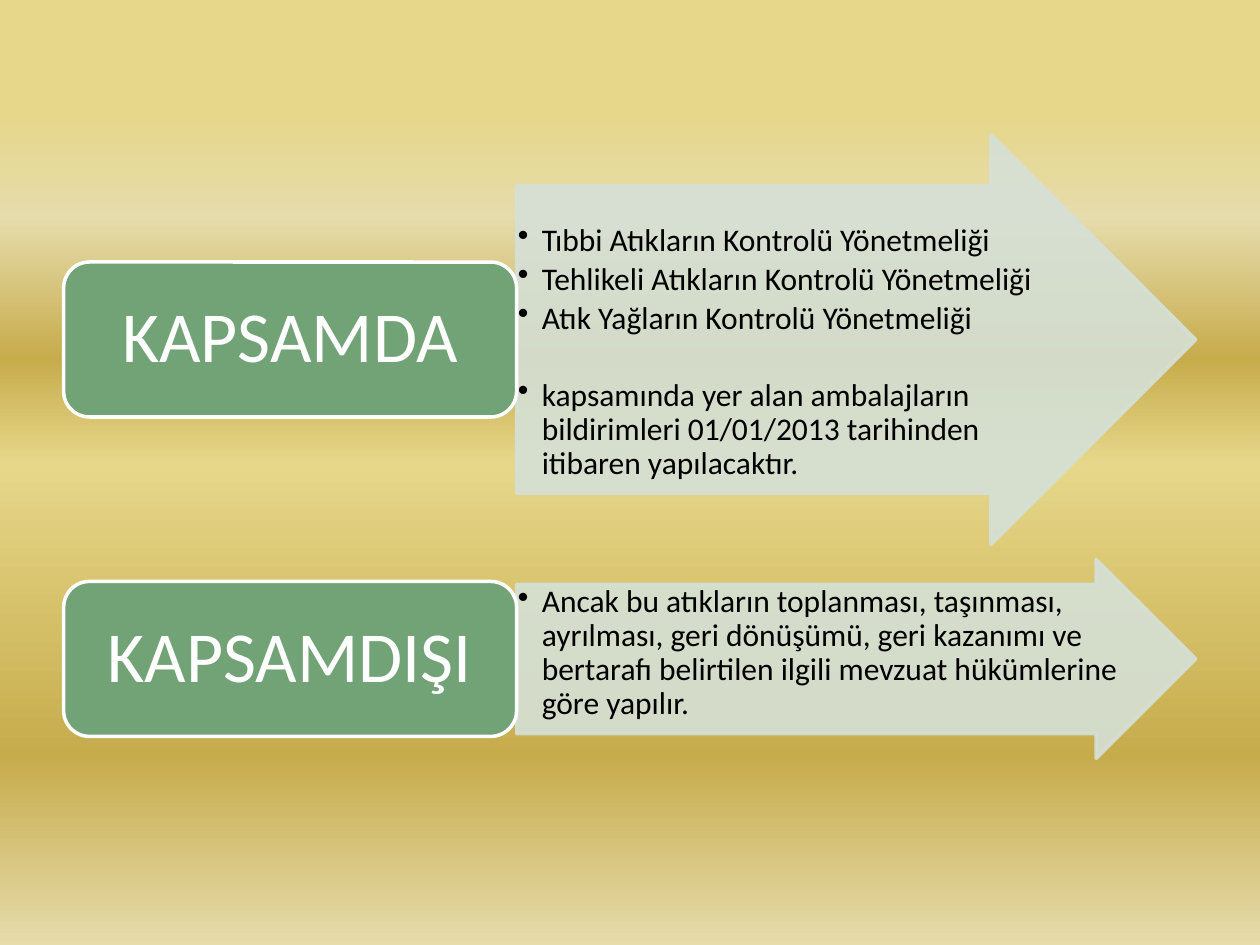
from lxml import etree
from pptx import Presentation
from pptx.dml.color import RGBColor
from pptx.enum import shapes, text
from pptx.oxml.ns import qn
from pptx.util import Pt

HUES = {"pale": "D5E0D6", "green": "72A376", "white": "FFFFFF", "black": "000000",
        "gold": "E6D78A", "sand": "E6DCAC", "ochre": "C7AC4C"}
STOPS = [(12, "gold"), (23, "sand"), (38, "ochre"), (49, "gold"), (80, "ochre"), (100, "sand")]
FONT = "Calibri"
GAP, BREAK = 2.8, 24.6
ROWS = [
    {"label": "KAPSAMDA", "top": 77.04, "high": 234, "inset": 21.8,
     "items": [("Tıbbi Atıkların Kontrolü Yönetmeliği", GAP),
               ("Tehlikeli Atıkların Kontrolü Yönetmeliği", GAP),
               ("Atık Yağların Kontrolü Yönetmeliği", BREAK),
               ("kapsamında yer alan ambalajların bildirimleri 01/01/2013 "
                "tarihinden itibaren yapılacaktır.", GAP)]},
    {"label": "KAPSAMDIŞI", "top": 319.68, "high": 113.76, "inset": 0.72,
     "items": [("Ancak bu atıkların toplanması, taşınması, ayrılması, geri dönüşümü, "
                "geri kazanımı ve bertarafı belirtilen ilgili mevzuat hükümlerine "
                "göre yapılır.", GAP)]},
]
LEFT, SPLIT, RIGHT, BOX = 36.36, 295.2, 683.28, 88.56


def rgb(hue):
    return RGBColor.from_string(HUES[hue])


def paint(slide):
    fill = slide.background.fill
    fill.gradient()
    fill.gradient_angle = 270
    stops = next(slide.element.iter(qn("a:gsLst")))
    for old in list(stops):
        stops.remove(old)
    for pos, hue in STOPS:
        stop = etree.SubElement(stops, qn("a:gs"), pos=str(pos * 1000))
        etree.SubElement(stop, qn("a:srgbClr"), val=HUES[hue])


def block(slide, kind, area, fill, line, pads, anchor):
    shape = slide.shapes.add_shape(kind, *map(Pt, area))
    shape.shadow.inherit = False
    shape.fill.solid()
    shape.fill.fore_color.rgb = rgb(fill)
    shape.line.color.rgb = rgb(line)
    shape.line.width = Pt(2)
    frame = shape.text_frame
    frame.word_wrap = True
    frame.vertical_anchor = anchor
    (frame.margin_left, frame.margin_top,
     frame.margin_right, frame.margin_bottom) = map(Pt, pads)
    return shape


def style(para, size, hue, align):
    para.alignment = align
    para.line_spacing = 0.9
    font = para.runs[0].font
    font.name, font.size, font.color.rgb = FONT, Pt(size), rgb(hue)


def bullet(para):
    props = para._p.get_or_add_pPr()
    props.set("marL", str(Pt(13.68)))
    props.set("indent", str(-Pt(13.68)))
    etree.SubElement(props, qn("a:buChar"), char="•")


def arrow(slide, row):
    area = (SPLIT, row["top"], RIGHT - SPLIT, row["high"])
    shape = block(slide, shapes.MSO_SHAPE.RIGHT_ARROW, area, "pale", "pale",
                  (0.72, row["inset"], 0.72, 0.72), text.MSO_ANCHOR.TOP)
    shape.adjustments[0], shape.adjustments[1] = 0.75, 0.5
    for tint in shape._element.spPr.iter(qn("a:srgbClr")):
        etree.SubElement(tint, qn("a:alpha"), val="90000")
    frame = shape.text_frame
    for i, (words, gap) in enumerate(row["items"]):
        para = frame.add_paragraph() if i else frame.paragraphs[0]
        para.text = words
        style(para, 18, "black", text.PP_ALIGN.LEFT)
        para.space_after = Pt(gap)
        bullet(para)


def label(slide, row):
    top = row["top"] + (row["high"] - BOX) / 2
    shape = block(slide, shapes.MSO_SHAPE.ROUNDED_RECTANGLE,
                  (LEFT, top, SPLIT - LEFT, BOX), "green", "white",
                  (12.24, 6.48, 12.24, 6.48), text.MSO_ANCHOR.MIDDLE)
    para = shape.text_frame.paragraphs[0]
    para.text = row["label"]
    style(para, 41, "white", text.PP_ALIGN.CENTER)


def main():
    deck = Presentation()
    deck.slide_width, deck.slide_height = Pt(720), Pt(540)
    slide = deck.slides.add_slide(deck.slide_layouts[6])
    paint(slide)
    for row in ROWS:
        arrow(slide, row)
        label(slide, row)
    deck.save("out.pptx")


if __name__ == "__main__":
    main()
